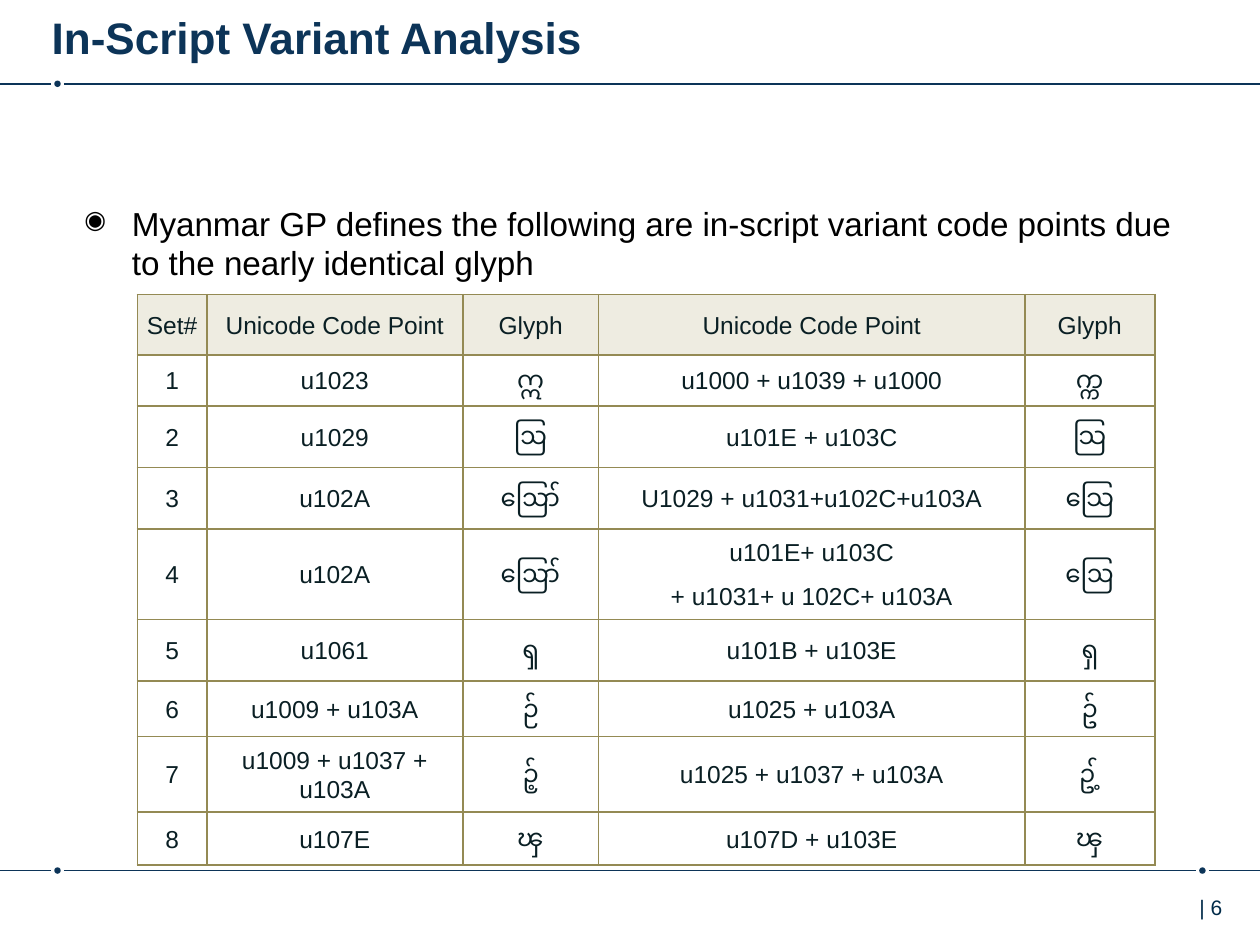
from typing import NamedTuple

from lxml import etree
from pptx import Presentation
from pptx.dml.color import RGBColor
from pptx.enum.shapes import MSO_CONNECTOR, MSO_SHAPE
from pptx.enum.text import MSO_ANCHOR, MSO_AUTO_SIZE, PP_ALIGN
from pptx.oxml.ns import qn
from pptx.util import Cm, Pt

STRAIGHT = MSO_CONNECTOR.STRAIGHT
OVAL = MSO_SHAPE.OVAL
MIDDLE = MSO_ANCHOR.MIDDLE
NO_AUTOFIT = MSO_AUTO_SIZE.NONE
LEFT, CENTER = PP_ALIGN.LEFT, PP_ALIGN.CENTER

FONT = "Arial"
COLORS = {
    "navy": "0C3458",
    "page_number": "002B49",
    "body": "000000",
    "cell": "0A1F24",
    "header_fill": "EEECE1",
    "border": "948A54",
}
SLIDE_WIDTH, SLIDE_HEIGHT = 25.4, 19.05
DOT_SIZE = 0.13
DOT_GAP = 0.13


class Rule(NamedTuple):
    """A full-width line interrupted by dots, in centimetres."""
    y: float
    dots: tuple[float, ...]


class VariantSet(NamedTuple):
    code_point: str
    glyph: str
    variant_code_points: str
    variant_glyph: str


RULES = [Rule(1.69, (1.16,)), Rule(17.55, (1.16, 24.24))]

HEADERS = ["Set#", "Unicode Code Point", "Glyph", "Unicode Code Point", "Glyph"]
VARIANT_SETS = [
    VariantSet("u1023", "ဣ", "u1000 + u1039 + u1000", "က္က"),
    VariantSet("u1029", "ဩ", "u101E + u103C", "သြ"),
    VariantSet("u102A", "ဪ", "U1029 + u1031+u102C+u103A", "သြော်"),
    VariantSet("u102A", "ဪ", "u101E+ u103C\n+ u1031+ u 102C+ u103A", "ဩော်"),
    VariantSet("u1061", "ၡ", "u101B + u103E", "ရှ"),
    VariantSet("u1009 + u103A", "ဉ်", "u1025 + u103A", "ဥ်"),
    VariantSet("u1009 + u1037 + u103A", "ဉ့်", "u1025 + u1037 + u103A", "ဥ့်"),
    VariantSet("u107E", "ၾ", "u107D + u103E", "ၽှ"),
]
COLUMN_WIDTHS = [1.4, 5.16, 2.74, 8.59, 2.62]
ROW_HEIGHTS = [1.22, 1.02, 1.24, 1.24, 1.83, 1.24, 1.12, 1.52, 1.07]


def color(name: str) -> RGBColor:
    return RGBColor.from_string(COLORS[name])


def set_font(para, size: float, color_name: str, bold: bool = False) -> None:
    font = para.font
    font.name, font.size, font.bold = FONT, Pt(size), bold
    font.color.rgb = color(color_name)


def set_margins(target, horizontal: float, vertical: float) -> None:
    target.margin_left = target.margin_right = Cm(horizontal)
    target.margin_top = target.margin_bottom = Cm(vertical)


def draw_segment(page, start: float, end: float, y: float) -> None:
    line = page.shapes.add_connector(STRAIGHT, Cm(start), Cm(y), Cm(end), Cm(y))
    line.line.color.rgb = color("navy")
    line.line.width = Pt(1)
    etree.SubElement(line._element.spPr, qn("a:effectLst"))


def draw_rule(page, rule: Rule) -> None:
    start = 0.0
    for center in rule.dots:
        draw_segment(page, start, center - DOT_GAP, rule.y)
        dot = page.shapes.add_shape(
            OVAL, Cm(center - DOT_SIZE / 2), Cm(rule.y - DOT_SIZE / 2),
            Cm(DOT_SIZE), Cm(DOT_SIZE))
        dot.shadow.inherit = False
        dot.fill.solid()
        dot.fill.fore_color.rgb = color("navy")
        dot.line.fill.background()
        start = center + DOT_GAP
    draw_segment(page, start, SLIDE_WIDTH, rule.y)


def format_title(page, text: str) -> None:
    title = page.shapes.title
    title.left, title.top = Cm(1.04), Cm(0.13)
    title.width, title.height = Cm(22.25), Cm(1.24)
    frame = title.text_frame
    frame.text = text
    frame.auto_size = NO_AUTOFIT
    frame.vertical_anchor = MIDDLE
    set_margins(frame, 0, 0.13)
    para = frame.paragraphs[0]
    para.alignment = LEFT
    set_font(para, 25.2, "navy", bold=True)


def add_bullet(para, symbol: str, indent: float) -> None:
    properties = para._p.get_or_add_pPr()
    properties.set("marL", str(Cm(indent)))
    properties.set("indent", str(-Cm(indent)))
    bullet_color = etree.SubElement(properties, qn("a:buClr"))
    etree.SubElement(bullet_color, qn("a:srgbClr"), val=COLORS["body"])
    etree.SubElement(properties, qn("a:buSzPct"), val="75000")
    etree.SubElement(properties, qn("a:buChar"), char=symbol)


def add_statement(page, text: str) -> None:
    box = page.shapes.add_textbox(Cm(1.7), Cm(4.09), Cm(21.97), Cm(1.85))
    frame = box.text_frame
    frame.word_wrap = True
    set_margins(frame, 0, 0)
    para = frame.paragraphs[0]
    para.text = text
    add_bullet(para, "◉", 0.96)
    set_font(para, 19, "body")


def add_page_number(page, text: str) -> None:
    box = page.shapes.add_textbox(Cm(23.6), Cm(17.91), Cm(1.8), Cm(1.02))
    frame = box.text_frame
    frame.word_wrap = True
    frame.margin_left = Cm(0.58)
    para = frame.paragraphs[0]
    para.text = text
    set_font(para, 12, "page_number")


def add_borders(cell) -> None:
    properties = cell._tc.get_or_add_tcPr()
    for position, side in enumerate(("a:lnL", "a:lnR", "a:lnT", "a:lnB")):
        border = etree.Element(qn(side), w=str(Pt(1)))
        fill = etree.SubElement(border, qn("a:solidFill"))
        etree.SubElement(fill, qn("a:srgbClr"), val=COLORS["border"])
        properties.insert(position, border)


def fill_cell(cell, text: str, is_header: bool) -> None:
    cell.text = text
    cell.vertical_anchor = MIDDLE
    set_margins(cell, 0.08, 0.08)
    if is_header:
        cell.fill.solid()
        cell.fill.fore_color.rgb = color("header_fill")
    else:
        cell.fill.background()
    add_borders(cell)
    for para in cell.text_frame.paragraphs:
        para.alignment = CENTER
        para.line_spacing = 1.07
        para.space_after = Pt(8)
        set_font(para, 14, "cell")


def add_variant_table(page) -> None:
    rows = [HEADERS] + [[str(number), *variant]
                        for number, variant in enumerate(VARIANT_SETS, 1)]
    table = page.shapes.add_table(
        len(rows), len(HEADERS), Cm(2.77), Cm(5.94),
        Cm(sum(COLUMN_WIDTHS)), Cm(sum(ROW_HEIGHTS))).table
    table.horz_banding = False
    for column, width in zip(table.columns, COLUMN_WIDTHS):
        column.width = Cm(width)
    for row_index, (row, height, texts) in enumerate(zip(table.rows, ROW_HEIGHTS, rows)):
        row.height = Cm(height)
        for cell, text in zip(row.cells, texts):
            fill_cell(cell, text, is_header=row_index == 0)


def main() -> None:
    deck = Presentation()
    deck.slide_width, deck.slide_height = Cm(SLIDE_WIDTH), Cm(SLIDE_HEIGHT)
    page = deck.slides.add_slide(deck.slide_layouts[5])
    for rule in RULES:
        draw_rule(page, rule)
    add_page_number(page, "| 6")
    format_title(page, "In-Script Variant Analysis")
    add_statement(page, "Myanmar GP defines the following are in-script variant code points "
                        "due to the nearly identical glyph")
    add_variant_table(page)
    deck.save("out.pptx")


if __name__ == "__main__":
    main()
